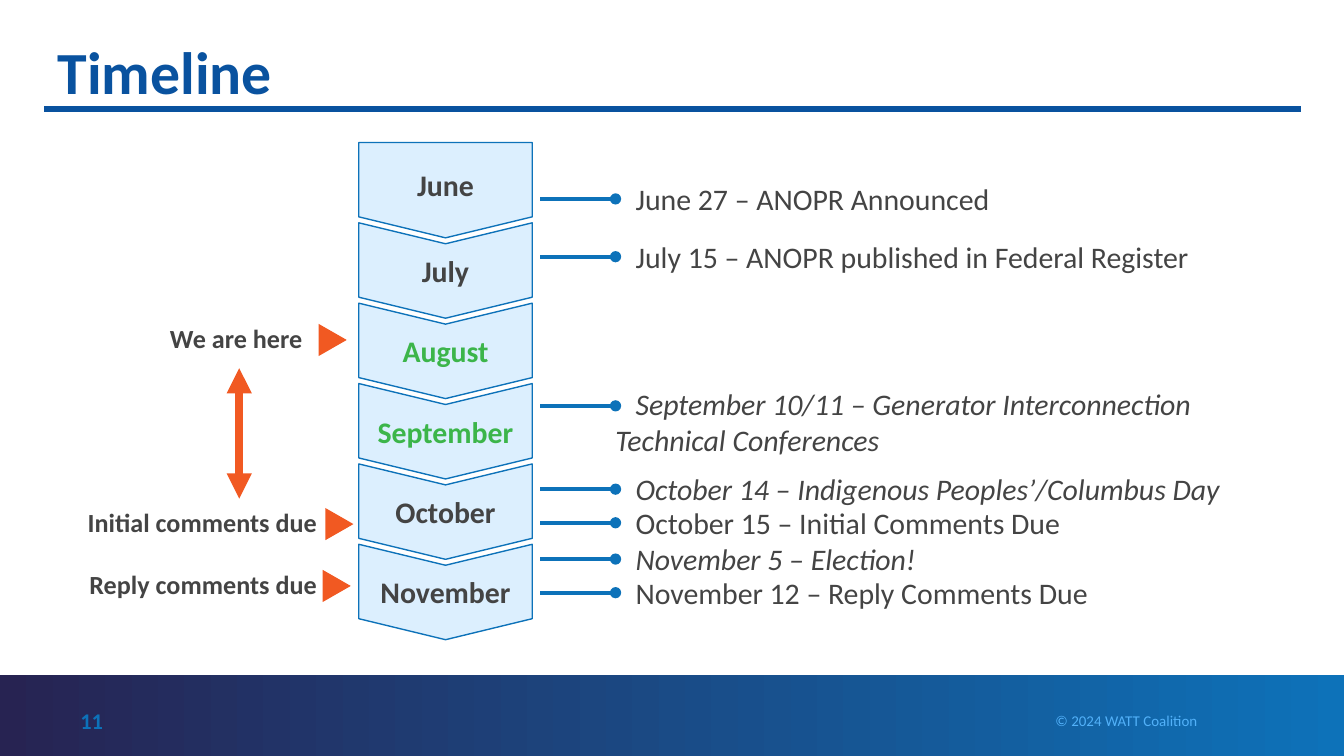
import dataclasses
import lxml.etree
import pptx
import pptx.dml.color
import pptx.enum.shapes
import pptx.enum.text
import pptx.oxml.ns
import pptx.util

Inches = pptx.util.Inches
Shape = pptx.enum.shapes.MSO_SHAPE
Align = pptx.enum.text.PP_ALIGN
Anchor = pptx.enum.text.MSO_ANCHOR
qn = pptx.oxml.ns.qn

PAGE_WIDTH = 10
PAGE_HEIGHT = PAGE_WIDTH * 9 / 16


@dataclasses.dataclass(frozen=True)
class Theme:
    font: str = "Calibri"
    title: str = "09529F"
    accent: str = "0D72B9"
    night: str = "272352"
    pale: str = "DCEFFE"
    text: str = "444444"
    current: str = "3CB54A"
    marker: str = "F15922"
    credit: str = "52B1F9"
    title_size: float = 32
    body_size: float = 16
    label_size: float = 14
    number_size: float = 12
    credit_size: float = 8


@dataclasses.dataclass(frozen=True)
class Box:
    left: float
    top: float
    width: float
    height: float

    def inches(self):
        return [Inches(n) for n in (self.left, self.top, self.width, self.height)]


THEME = Theme()


def rgb(color):
    return pptx.dml.color.RGBColor.from_string(color)


def add_span(para, text, size, color, bold=False, italic=False):
    span = para.add_run()
    span.text = text
    span.font.name = THEME.font
    span.font.size = pptx.util.Pt(size)
    span.font.color.rgb = rgb(color)
    span.font.bold = bold
    span.font.italic = italic


def set_insets(frame, side=0, end=0):
    frame.margin_left = frame.margin_right = Inches(side)
    frame.margin_top = frame.margin_bottom = Inches(end)


def add_text_box(page, box, align=Align.LEFT, anchor=Anchor.TOP, side=0):
    shape = page.shapes.add_textbox(*box.inches())
    frame = shape.text_frame
    frame.word_wrap = True
    frame.vertical_anchor = anchor
    set_insets(frame, side)
    frame.paragraphs[0].alignment = align
    return shape, frame.paragraphs[0]


def add_line(page, start, end, color, width, **ends):
    line = page.shapes.add_connector(
        pptx.enum.shapes.MSO_CONNECTOR.STRAIGHT, *[Inches(n) for n in (*start, *end)])
    line.line.color.rgb = rgb(color)
    line.line.width = pptx.util.Pt(width)
    for tag in ("headEnd", "tailEnd"):
        if tag in ends:
            lxml.etree.SubElement(line.line._get_or_add_ln(), qn("a:" + tag), type=ends[tag])
    lxml.etree.SubElement(line._element.spPr, qn("a:effectLst"))
    return line


def add_turned_shape(page, kind, box, fill):
    left = box.left + (box.width - box.height) / 2
    top = box.top + (box.height - box.width) / 2
    shape = page.shapes.add_shape(kind, *Box(left, top, box.height, box.width).inches())
    shape.rotation = 90
    shape.shadow.inherit = False
    shape.fill.solid()
    shape.fill.fore_color.rgb = rgb(fill)
    shape.line.fill.background()
    return shape


def add_header(page, box, text):
    title = page.shapes.title
    title.left, title.top, title.width, title.height = box.inches()
    title.text_frame.vertical_anchor = Anchor.MIDDLE
    set_insets(title.text_frame, 0.1, 0.05)
    para = title.text_frame.paragraphs[0]
    para.alignment = Align.LEFT
    add_span(para, text, THEME.title_size, THEME.title, bold=True)
    rule = box.top + box.height - 0.01
    add_line(page, (box.left, rule), (9.68, rule), THEME.title, 3)


def add_footer(page, box, number, credit):
    band = page.shapes.add_shape(Shape.RECTANGLE, *box.inches())
    band.shadow.inherit = False
    band.line.fill.background()
    band.fill.gradient()
    band.fill.gradient_angle = 180
    for stop, color, position in zip(
            band.fill.gradient_stops, (THEME.accent, THEME.night), (0, 1)):
        stop.color.rgb = rgb(color)
        stop.position = position
    top = box.top + 0.19
    _, para = add_text_box(page, Box(box.left + 0.5, top, 2.33, 0.3),
                           anchor=Anchor.MIDDLE, side=0.1)
    add_span(para, number, THEME.number_size, THEME.accent, bold=True)
    _, para = add_text_box(page, Box(box.left + 5.84, top, 3.17, 0.3),
                           Align.RIGHT, Anchor.MIDDLE, 0.1)
    add_span(para, credit, THEME.credit_size, THEME.credit)


def add_months(page, box, months, current):
    height = 0.71
    pitch = (box.height - height) / (len(months) - 1)
    for index, month in enumerate(months):
        kind = Shape.CHEVRON if index else Shape.PENTAGON
        place = Box(box.left, box.top + index * pitch, box.width, height)
        shape = add_turned_shape(page, kind, place, THEME.pale)
        shape.adjustments[0] = 0.22
        shape.line.color.rgb = rgb(THEME.accent)
        shape.line.width = pptx.util.Pt(0.75)
        frame = shape.text_frame
        frame.vertical_anchor = Anchor.MIDDLE
        set_insets(frame, *(() if index else (0.1, 0.05)))
        shape._element.txBody.bodyPr.set("vert", "vert270")
        para = frame.paragraphs[0]
        para.alignment = Align.CENTER
        color = THEME.current if month in current else THEME.text
        add_span(para, month, THEME.body_size, color, bold=True)


def add_events(page, box, events):
    line_height, stem = 0.27, 0.56
    left = box.left + stem
    for offset, lines, italic in events:
        middle = box.top + offset
        single = len(lines) == 1
        top = middle - (line_height / 2 if single else 0.15)
        label, para = add_text_box(
            page, Box(left, top, box.width - stem, line_height * len(lines)))
        para._p.get_or_add_pPr().set("indent", str(Inches(0.15)))
        for index, text in enumerate(lines):
            if index:
                para.add_line_break()
            add_span(para, text, THEME.body_size, THEME.text, italic=italic)
        line = add_line(page, (box.left, middle), (left, middle), THEME.accent, 2, tailEnd="oval")
        if single:
            line.end_connect(label, 1)


def add_markers(page, box, markers):
    for text, right, offset, tip in markers:
        top = box.top + offset
        _, para = add_text_box(page, Box(box.left, top, right, 0.24), Align.RIGHT)
        add_span(para, text, THEME.label_size, THEME.text, bold=True)
        pointer = Box(box.left + tip - 0.21, top + 0.01, 0.21, 0.24)
        add_turned_shape(page, Shape.ISOSCELES_TRIANGLE, pointer, THEME.marker)
    middle = box.left + 1.38
    add_line(page, (middle, box.top + 0.34), (middle, box.top + 1.31), THEME.marker, 4.5,
             headEnd="triangle", tailEnd="triangle")


def main():
    deck = pptx.Presentation()
    deck.slide_width, deck.slide_height = Inches(PAGE_WIDTH), Inches(PAGE_HEIGHT)
    page = deck.slides.add_slide(deck.slide_layouts[5])
    add_footer(page, Box(0, PAGE_HEIGHT - 0.6, PAGE_WIDTH, 0.6), "11", "© 2024 WATT Coalition")
    add_header(page, Box(0.33, 0.23, 9.18, 0.59), "Timeline")
    add_months(page, Box(2.67, 1.06, 1.29, 3.7),
               ["June", "July", "August", "September", "October", "November"],
               {"August", "September"})
    add_events(page, Box(4.02, 1.06, 5.92, 3.7), [
        (0.42, ["June 27 – ANOPR Announced"], False),
        (0.85, ["July 15 – ANOPR published in Federal Register"], False),
        (1.96, ["September 10/11 – Generator Interconnection", "Technical Conferences"], True),
        (2.58, ["October 14 – Indigenous Peoples’/Columbus Day"], True),
        (2.83, ["October 15 – Initial Comments Due"], False),
        (3.1, ["November 5 – Election!"], True),
        (3.35, ["November 12 – Reply Comments Due"], False),
    ])
    add_markers(page, Box(0.4, 2.4, 2.23, 2.1), [
        ("We are here", 1.85, 0, 2.18),
        ("Initial comments due", 1.96, 1.37, 2.23),
        ("Reply comments due", 1.96, 1.83, 2.21),
    ])
    deck.save("out.pptx")


if __name__ == "__main__":
    main()
